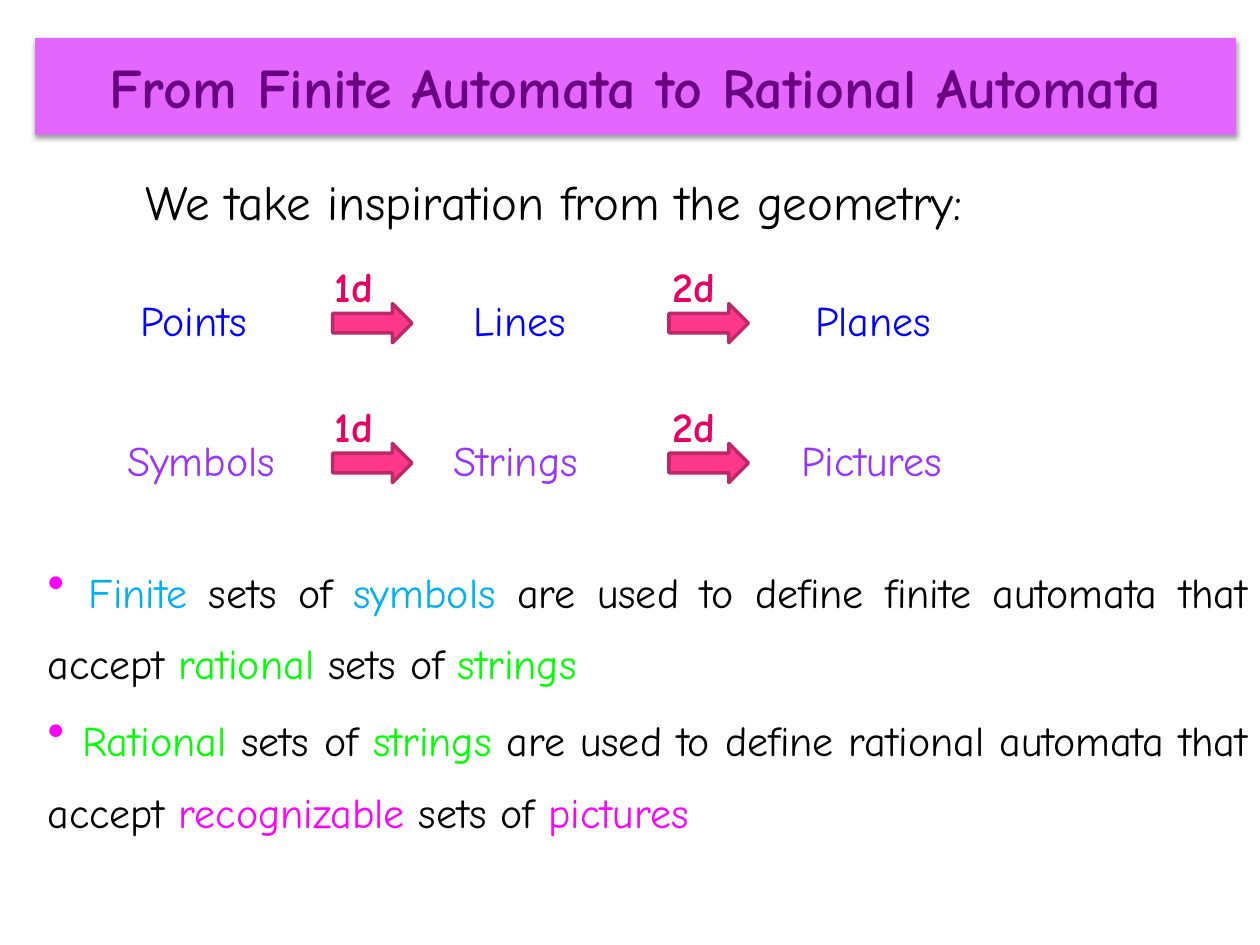
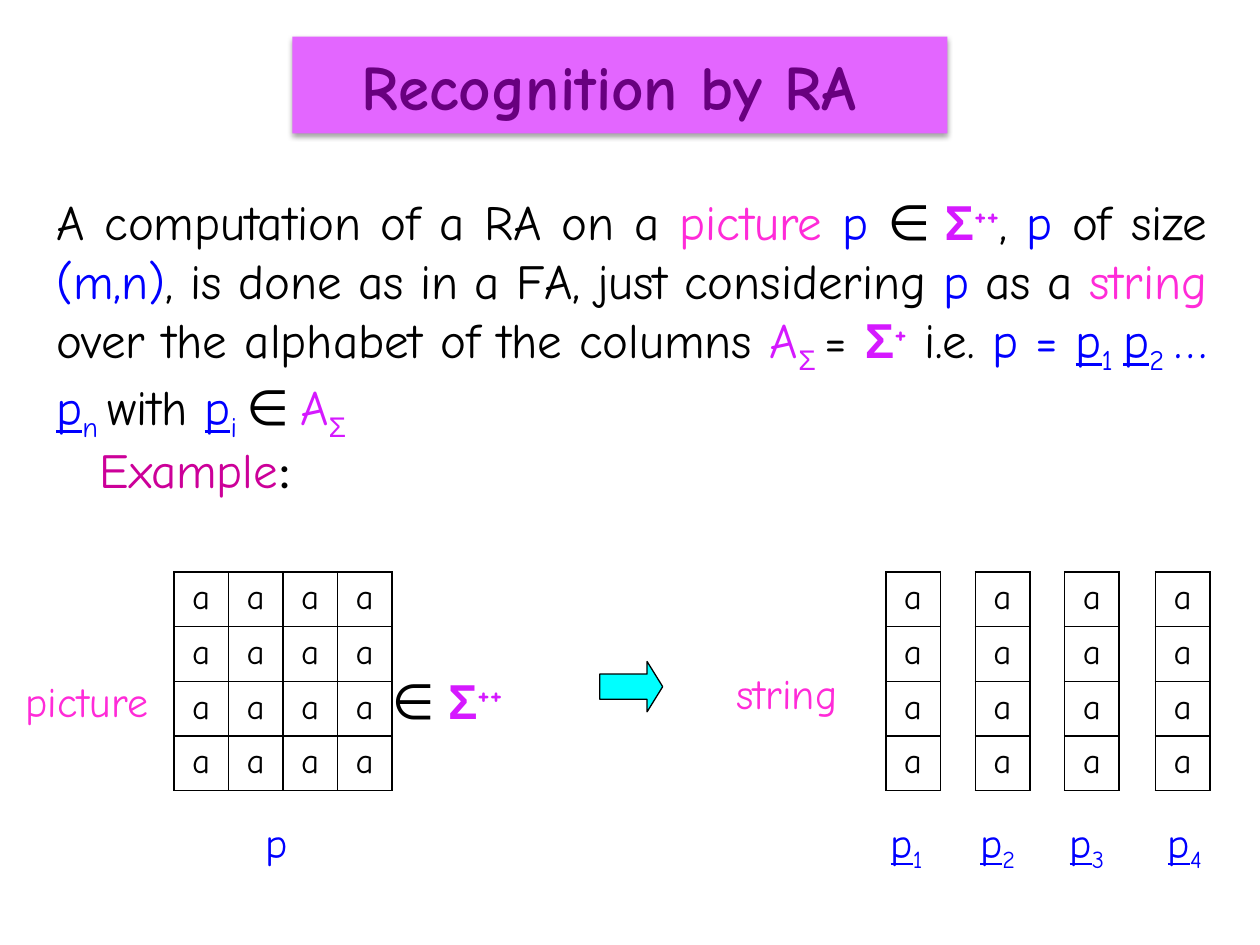
"""Build two slides on rational automata and how they recognise pictures."""
from lxml import etree
from pptx import Presentation
from pptx.dml.color import RGBColor
from pptx.enum.shapes import MSO_SHAPE
from pptx.enum.text import MSO_ANCHOR, PP_ALIGN
from pptx.oxml.ns import qn
from pptx.util import Inches, Pt

LEFT, CENTER, JUSTIFY = PP_ALIGN.LEFT, PP_ALIGN.CENTER, PP_ALIGN.JUSTIFY
TOP, MIDDLE = MSO_ANCHOR.TOP, MSO_ANCHOR.MIDDLE
RECTANGLE, RIGHT_ARROW = MSO_SHAPE.RECTANGLE, MSO_SHAPE.RIGHT_ARROW

FONT = "Comic Neue"
BLACK, BLUE, VIOLET, PINK, MAGENTA = "000000", "0000FF", "D519FF", "FF2BD8", "FF00FF"
SKY, GREEN = "00B0F0", "00FF00"
BANNER_FILL, BANNER_TEXT = "E366FF", "68007F"

STYLES = {
    "plain": {},
    "blue": {"color": BLUE},
    "pink": {"color": PINK},
    "violet": {"color": VIOLET},
    "sky": {"color": SKY},
    "green": {"color": GREEN},
    "magenta": {"color": MAGENTA},
    "wide": {"size": 28},
    "vector": {"color": BLUE, "underline": True},
    "index": {"color": BLUE, "baseline": -25},
    "member": {"font": "Calibri"},
    "sigma": {"font": "Arial", "color": VIOLET, "bold": True},
    "power": {"color": VIOLET, "bold": True, "baseline": 30},
    "sigma index": {"font": "Arial", "color": VIOLET, "baseline": -25},
    "example": {"color": "CC0099"},
    "row 1": {"color": BLUE},
    "row 2": {"color": "9933FF"},
    "dimension": {"color": "E90062", "bold": True},
    "banner": {"color": BANNER_TEXT, "bold": True},
}

INSPIRATION = [("We take inspiration from the geometry:", "plain")]
ANALOGIES = [
    ("row 1", 2.29, [("Points", 1.02), ("Lines", 3.66), ("Planes", 6.37)]),
    ("row 2", 3.4, [("Symbols", 0.91), ("Strings", 3.5), ("Pictures", 6.26)]),
]
STEPS = [("1d", 2.56, 2.64), ("2d", 5.24, 5.31)]
DEFINITIONS = [
    (4.3, [(" ", "wide"), ("Finite ", "sky"), ("sets of ", "plain"), ("symbols", "sky"),
           (" are used to define finite automata that accept ", "plain"),
           ("rational ", "green"), ("sets of ", "plain"), ("strings", "green")]),
    (5.48, [(" ", "wide"), ("Rational ", "green"), ("sets of ", "plain"), ("strings", "green"),
            (" are used to define rational automata that accept ", "plain"),
            ("recognizable ", "magenta"), ("sets of ", "plain"), ("pictures", "magenta")]),
]

COMPUTATION = [
    ("A computation of a RA on a ", "plain"), ("picture ", "pink"), ("p ", "blue"),
    ("∈ ", "member"), ("Σ", "sigma"), ("++", "power"), (", ", "plain"), ("p ", "blue"),
    ("of size ", "plain"), ("(m,n)", "blue"),
    (", is done as in a FA, just considering ", "plain"), ("p", "blue"), (" as a ", "plain"),
    ("string", "pink"), (" over the alphabet of the columns ", "plain"), ("A", "violet"),
    ("Σ ", "sigma index"), ("= ", "plain"), ("Σ", "sigma"), ("+", "power"),
    (" i.e. ", "plain"), ("p = ", "blue"), ("p", "vector"), ("1 ", "index"),
    ("p", "vector"), ("2 ", "index"), ("… ", "blue"), ("p", "vector"), ("n ", "index"),
    ("with ", "plain"), ("p", "vector"), ("i ", "index"), ("∈ ", "member"),
    ("A", "violet"), ("Σ", "sigma index"),
]
EXAMPLE = [("Example", "example"), (": ", "member")]
MEMBERSHIP = [("∈", "member"), (" Σ", "sigma"), ("++", "power")]
LETTER, GRID_SIZE, CELL = "a", 4, 0.433
GRID_LEFT, GRID_TOP = 1.38, 4.54
COLUMNS = [(7.03, 6.97), (7.74, 7.68), (8.45, 8.39), (9.17, 9.17)]


def rgb(color):
    return RGBColor.from_string(color)


def add_element(parent, tag, **attributes):
    return etree.SubElement(parent, qn(tag), attributes)


def write_runs(paragraph, runs, size):
    for text, style_name in runs:
        style = STYLES[style_name]
        run = paragraph.add_run()
        run.text = text
        run.font.name = style.get("font", FONT)
        run.font.size = Pt(style.get("size", size))
        run.font.color.rgb = rgb(style.get("color", BLACK))
        run.font.bold = style.get("bold", False)
        if style.get("underline"):
            run.font.underline = True
        if "baseline" in style:
            run.font._element.set("baseline", str(style["baseline"] * 1000))


def add_text(slide, box, runs, size=24, align=LEFT, anchor=TOP, inset=True):
    shape = slide.shapes.add_textbox(*map(Inches, box))
    frame = shape.text_frame
    frame.word_wrap = True
    frame.vertical_anchor = anchor
    if not inset:
        frame.margin_left = frame.margin_right = frame.margin_top = frame.margin_bottom = 0
    paragraph = frame.paragraphs[0]
    paragraph.alignment = align
    write_runs(paragraph, runs, size)
    return paragraph


def add_bullet(paragraph, mark, color):
    properties = paragraph._p.get_or_add_pPr()
    properties.set("marL", "0")
    properties.set("indent", "0")
    add_element(add_element(properties, "a:buClr"), "a:srgbClr", val=color)
    add_element(properties, "a:buChar", char=mark)


def add_filled_shape(slide, kind, box, fill, line=None, line_width=1):
    shape = slide.shapes.add_shape(kind, *map(Inches, box))
    shape.shadow.inherit = False
    shape.fill.solid()
    shape.fill.fore_color.rgb = rgb(fill)
    if line:
        shape.line.color.rgb = rgb(line)
        shape.line.width = Pt(line_width)
    else:
        shape.line.fill.background()
    return shape


def add_banner(slide, box, title, size):
    shape = add_filled_shape(slide, RECTANGLE, box, BANNER_FILL)
    effects = shape._element.spPr.find(qn("a:effectLst"))
    shadow = add_element(effects, "a:outerShdw", blurRad=str(Pt(3.1)), dist=str(Pt(1.6)),
                         dir="5400000", rotWithShape="0")
    add_element(add_element(shadow, "a:srgbClr", val=BLACK), "a:alpha", val="38000")
    frame = shape.text_frame
    frame.word_wrap = True
    frame.margin_left = frame.margin_right = 0
    frame.vertical_anchor = MIDDLE
    frame.paragraphs[0].alignment = CENTER
    write_runs(frame.paragraphs[0], [(title, "banner")], size)


def add_borders(cell):
    properties = cell._tc.get_or_add_tcPr()
    for position, side in enumerate(("a:lnL", "a:lnR", "a:lnT", "a:lnB")):
        line = add_element(properties, side, w=str(Pt(1)))
        add_element(add_element(line, "a:solidFill"), "a:srgbClr", val=BLACK)
        properties.insert(position, line)


def add_letter_grid(slide, left, column_count):
    box = (left, GRID_TOP, column_count * CELL, GRID_SIZE * CELL)
    table = slide.shapes.add_table(GRID_SIZE, column_count, *map(Inches, box)).table
    table.first_row = table.horz_banding = False
    for cell in table.iter_cells():
        cell.fill.background()
        add_borders(cell)
        paragraph = cell.text_frame.paragraphs[0]
        paragraph.alignment = CENTER
        write_runs(paragraph, [(LETTER, "plain")], 20)


def build_geometry_slide(slide):
    add_banner(slide, (0.28, 0.3, 9.53, 0.77), "From Finite Automata to Rational Automata", 32)
    add_text(slide, (1.06, 1.31, 7.72, 0.79), INSPIRATION, 28, JUSTIFY)
    for top, runs in DEFINITIONS:
        paragraph = add_text(slide, (0.28, top, 9.72, 1.34), runs, align=JUSTIFY)
        add_bullet(paragraph, "•", MAGENTA)
        paragraph.line_spacing = Pt(40)
    for style, top, words in ANALOGIES:
        for word, left in words:
            add_text(slide, (left, top, 1.62, 0.5), [(word, style)])
        for label, label_left, arrow_left in STEPS:
            add_text(slide, (label_left, top - 0.27, 0.76, 0.5), [(label, "dimension")])
            add_filled_shape(slide, RIGHT_ARROW, (arrow_left, top + 0.12, 0.63, 0.31),
                             "FF388C", "BD2968", 2)


def build_recognition_slide(slide):
    add_text(slide, (0.35, 1.47, 9.33, 2.05), COMPUTATION, 28, JUSTIFY)
    add_banner(slide, (2.32, 0.29, 5.2, 0.77), "Recognition by RA ", 36)
    add_text(slide, (0.51, 3.44, 2.17, 0.57), EXAMPLE, 28, CENTER)
    add_text(slide, (0.12, 5.36, 1.14, 0.4), [("picture", "pink")], 24, CENTER, MIDDLE, False)
    add_text(slide, (3.11, 5.32, 0.98, 0.47), MEMBERSHIP, 28, JUSTIFY, inset=False)
    arrow = add_filled_shape(slide, RIGHT_ARROW, (4.76, 5.25, 0.5, 0.4), "00FFFF", BLACK, 0.75)
    arrow.adjustments[1] = 0.31
    add_text(slide, (5.55, 5.25, 1.5, 0.5), [("string ", "pink")], align=CENTER)
    add_letter_grid(slide, GRID_LEFT, GRID_SIZE)
    add_text(slide, (2.01, 6.43, 0.39, 0.52), [("p", "blue")])
    for number, (left, label_left) in enumerate(COLUMNS, 1):
        add_letter_grid(slide, left, 1)
        add_text(slide, (label_left, 6.43, 0.55, 0.52), [("p", "vector"), (str(number), "index")])


def main():
    presentation = Presentation()
    presentation.slide_width, presentation.slide_height = Inches(10), Inches(7.5)
    for build in (build_geometry_slide, build_recognition_slide):
        build(presentation.slides.add_slide(presentation.slide_layouts[6]))
    presentation.save("out.pptx")


if __name__ == "__main__":
    main()
